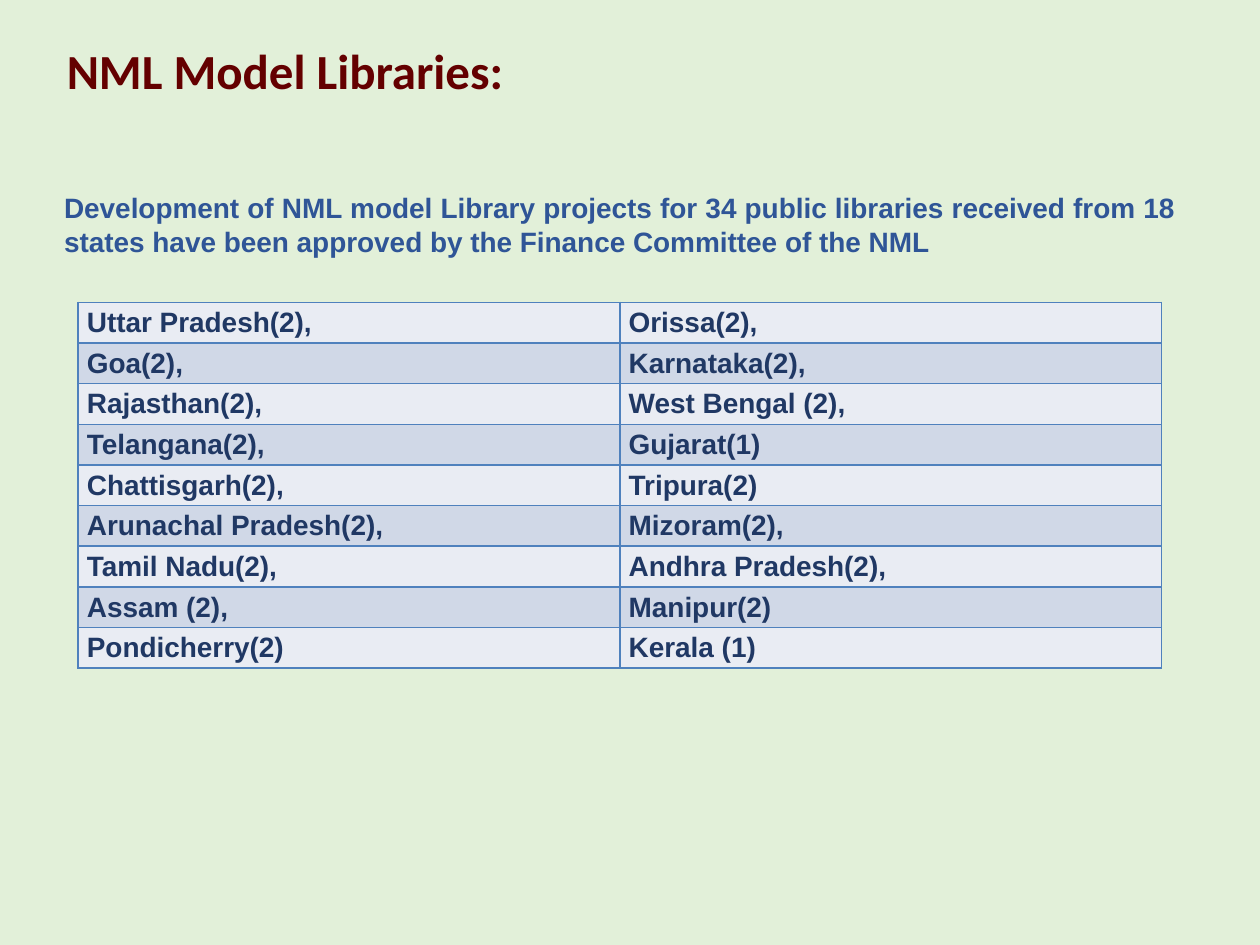
from typing import NamedTuple

from lxml.etree import SubElement as Sub
from pptx import Presentation
from pptx.dml.color import RGBColor as Rgb
from pptx.enum.text import MSO_ANCHOR as Anchor, MSO_AUTO_SIZE as Fit, PP_ALIGN as Align
from pptx.oxml.ns import qn
from pptx.util import Inches, Pt

WIDE, HIGH = Inches(10), Inches(7.5)
HUES = {
    "back": "E2F0D9", "title": "640000", "lead": "2F5597",
    "state": "203864", "rule": "4F81BD", "light": "E9ECF3", "dark": "D0D8E7",
}
STATES = [
    ("Uttar Pradesh(2),", "Orissa(2),"),
    ("Goa(2),", "Karnataka(2),"),
    ("Rajasthan(2),", "West Bengal (2),"),
    ("Telangana(2),", "Gujarat(1)"),
    ("Chattisgarh(2),", "Tripura(2)"),
    ("Arunachal Pradesh(2),", "Mizoram(2),"),
    ("Tamil Nadu(2),", "Andhra Pradesh(2),"),
    ("Assam (2),", "Manipur(2)"),
    ("Pondicherry(2)", "Kerala (1)"),
]


class Box(NamedTuple):
    """A place on the slide, in shares of its width and height."""
    x: float
    y: float
    w: float
    h: float

    def area(self) -> tuple[int, int, int, int]:
        return (int(self.x * WIDE), int(self.y * HIGH),
                int(self.w * WIDE), int(self.h * HIGH))


class Style(NamedTuple):
    face: str
    size: int
    hue: str


TITLE = Style("Calibri", 28, "title")
LEAD = Style("Arial", 16, "lead")
STATE = Style("Arial", 16, "state")


def write(frame, text: str, style: Style) -> None:
    frame.text = text
    line = frame.paragraphs[0]
    line.alignment = Align.JUSTIFY
    font = line.font
    font.name, font.size, font.bold = style.face, Pt(style.size), True
    font.color.rgb = Rgb.from_string(HUES[style.hue])


def inset(item, side: float, top: float, base: float) -> None:
    item.margin_left = item.margin_right = Inches(side)
    item.margin_top, item.margin_bottom = Inches(top), Inches(base)


def reshape(shape, preset: str, adjust: int) -> None:
    form = Sub(shape._element.spPr, qn("a:prstGeom"), prst=preset)
    Sub(Sub(form, qn("a:avLst")), qn("a:gd"), name="adj", fmla=f"val {adjust}")


def border(cell, hue: str, width: float) -> None:
    props = cell._tc.get_or_add_tcPr()
    for spot, side in enumerate(("a:lnL", "a:lnR", "a:lnT", "a:lnB")):
        line = props.makeelement(qn(side), {"w": str(Pt(width))})
        fill = Sub(line, qn("a:solidFill"))
        Sub(fill, qn("a:srgbClr"), val=HUES[hue])
        props.insert(spot, line)


def draw_grid(slide, rows: list[tuple[str, str]], box: Box) -> None:
    table = slide.shapes.add_table(len(rows), len(rows[0]), *box.area()).table
    for r, row in enumerate(rows):
        for c, name in enumerate(row):
            cell = table.cell(r, c)
            write(cell.text_frame, name, STATE)
            inset(cell, 0.07, 0.04, 0.01)
            cell.fill.solid()
            cell.fill.fore_color.rgb = Rgb.from_string(HUES["dark" if r % 2 else "light"])
            border(cell, "rule", 0.96)


def main() -> None:
    deck = Presentation()
    deck.slide_width, deck.slide_height = WIDE, HIGH
    slide = deck.slides.add_slide(deck.slide_layouts[5])
    slide.background.fill.solid()
    slide.background.fill.fore_color.rgb = Rgb.from_string(HUES["back"])

    # Title in an unfilled pentagon
    title = slide.shapes.title
    title.left, title.top, title.width, title.height = Box(0.046, 0.06, 0.663, 0.051).area()
    reshape(title, "homePlate", 27400)
    frame = title.text_frame
    write(frame, "NML Model Libraries:", TITLE)
    inset(frame, 0.07, 0.04, 0.04)
    frame.vertical_anchor, frame.auto_size = Anchor.BOTTOM, Fit.NONE

    # Lead sentence
    lead = slide.shapes.add_textbox(*Box(0.041, 0.195, 0.902, 0.085).area())
    lead.text_frame.word_wrap = True
    write(lead.text_frame, "Development of NML model Library projects for 34 public libraries "
          "received from 18 states have been approved by the Finance Committee of the NML", LEAD)

    # States and their library counts
    draw_grid(slide, STATES, Box(0.062, 0.32, 0.86, 0.387))

    deck.save("out.pptx")


if __name__ == "__main__":
    main()
